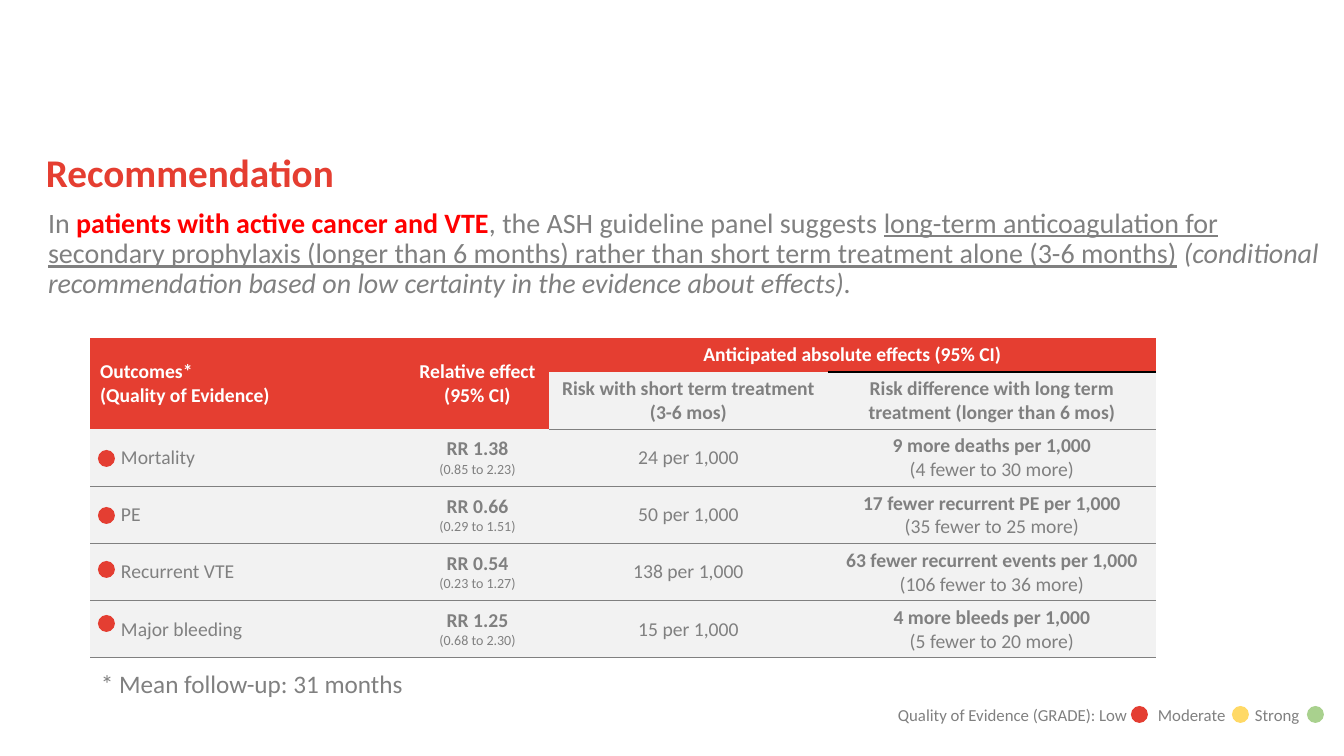
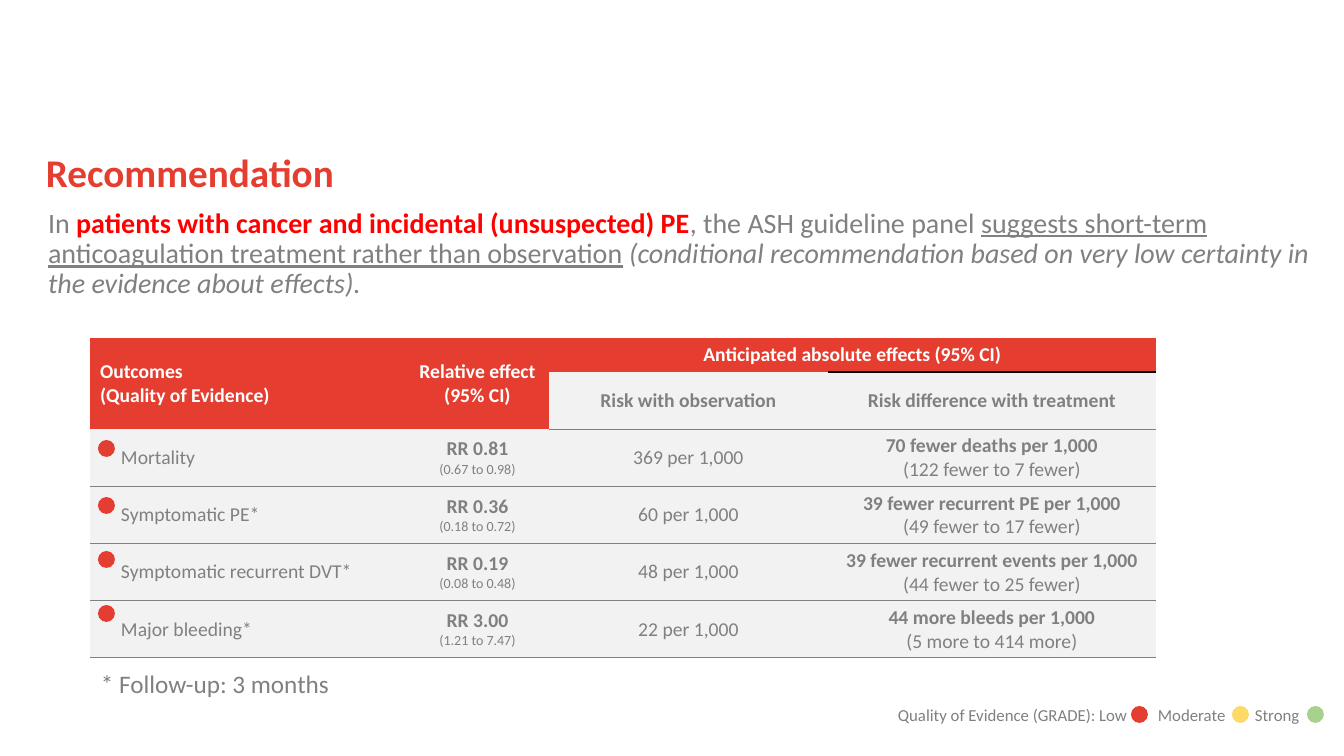
from dataclasses import dataclass
from typing import NamedTuple

from lxml import etree
from pptx import Presentation
from pptx.dml.color import RGBColor
from pptx.enum.shapes import MSO_SHAPE
from pptx.enum.text import MSO_ANCHOR, MSO_AUTO_SIZE, PP_ALIGN
from pptx.oxml.ns import qn
from pptx.util import Emu, Pt

ELLIPSE = MSO_SHAPE.OVAL
TOP, MIDDLE = MSO_ANCHOR.TOP, MSO_ANCHOR.MIDDLE
LEFT, CENTER = PP_ALIGN.LEFT, PP_ALIGN.CENTER
NO_FIT = MSO_AUTO_SIZE.NONE
PLAIN_TABLE = "{2D5ABB26-0587-4C30-8999-92F81FD0307C}"


@dataclass(frozen=True)
class Theme:
    font: str = "Calibri"
    red: str = "E53E31"
    low: str = "E43E32"
    moderate: str = "FFD966"
    strong: str = "A9D18E"
    emphasis: str = "FF0000"
    grey: str = "808080"
    pale: str = "F2F2F2"
    white: str = "FFFFFF"
    black: str = "000000"
    title: int = 28
    body: int = 20
    note: int = 18
    cell: int = 14
    legend: int = 12
    interval: int = 10


THEME = Theme()


class Box(NamedTuple):
    left: int
    top: int
    width: int
    height: int


class Span(NamedTuple):
    text: str
    size: int = THEME.cell
    color: str = THEME.grey
    bold: bool = False
    italic: bool = False
    underline: bool = False


@dataclass(frozen=True)
class Outcome:
    name: str
    ratio: str
    interval: str
    risk: str
    difference: str
    spread: str


@dataclass(frozen=True)
class Recommendation:
    patients: str
    lead: str
    advice: str
    certainty: str
    outcome_head: str
    risk_head: tuple[str, ...]
    difference_head: str
    outcomes: tuple[Outcome, ...]
    first_dot: int
    footnote: str


SLIDE_W, SLIDE_H = 1344, 756
TITLE_BOX = Box(46, 148, 1210, 79)
BODY_BOX = Box(48, 209, 1274, 170)
TABLE_BOX = Box(90, 338, 1066, 319)
COLUMNS = (316, 143, 279, 328)
ROWS = (34,) + (57,) * 5
NAME_INDENT = 31
DOT = 17
DOT_LEFT = 98
DOT_STEPS = (0, 57, 111, 165)
LEGEND_BOX = Box(888, 700, 456, 30)
LEGEND_TABS = (260, 357)
LEGEND_DOTS = ((1131, THEME.low), (1232, THEME.moderate), (1307, THEME.strong))
LEGEND_DOT_TOP = 706
NOTE_BOX = Box(91, 663, 340, 40)

RECOMMENDATIONS = (
    Recommendation(
        "patients with active cancer and VTE",
        ", the ASH guideline panel suggests ",
        "long-term anticoagulation for secondary prophylaxis (longer than 6 months) "
        "rather than short term treatment alone (3-6 months)",
        "(conditional recommendation based on low certainty in the evidence about effects).",
        "Outcomes*",
        ("Risk with short term treatment", "(3-6 mos)"),
        "Risk difference with long term treatment (longer than 6 mos)",
        (
            Outcome("Mortality", "RR 1.38", "(0.85 to 2.23)", "24 per 1,000",
                    "9 more deaths per 1,000", "(4 fewer to 30 more)"),
            Outcome("PE", "RR 0.66", "(0.29 to 1.51)", "50 per 1,000",
                    "17 fewer recurrent PE per 1,000", "(35 fewer to 25 more)"),
            Outcome("Recurrent VTE", "RR 0.54", "(0.23 to 1.27)", "138 per 1,000",
                    "63 fewer recurrent events per 1,000", "(106 fewer to 36 more)"),
            Outcome("Major bleeding", "RR 1.25", "(0.68 to 2.30)", "15 per 1,000",
                    "4 more bleeds per 1,000", "(5 fewer to 20 more)"),
        ),
        450,
        "* Mean follow-up: 31 months",
    ),
    Recommendation(
        "patients with cancer and incidental (unsuspected) PE",
        ", the ASH guideline panel ",
        "suggests short-term anticoagulation treatment rather than observation",
        "(conditional recommendation based on very low certainty in the evidence about effects).",
        "Outcomes",
        ("Risk with observation",),
        "Risk difference with treatment",
        (
            Outcome("Mortality", "RR 0.81", "(0.67 to 0.98)", "369 per 1,000",
                    "70 fewer deaths per 1,000", "(122 fewer to 7 fewer)"),
            Outcome("Symptomatic PE*", "RR 0.36", "(0.18 to 0.72)", "60 per 1,000",
                    "39 fewer recurrent PE per 1,000", "(49 fewer to 17 fewer)"),
            Outcome("Symptomatic recurrent DVT*", "RR 0.19", "(0.08 to 0.48)", "48 per 1,000",
                    "39 fewer recurrent events per 1,000", "(44 fewer to 25 fewer)"),
            Outcome("Major bleeding*", "RR 3.00", "(1.21 to 7.47)", "22 per 1,000",
                    "44 more bleeds per 1,000", "(5 more to 414 more)"),
        ),
        440,
        "* Follow-up: 3 months",
    ),
)


def px(n: int) -> Emu:
    return Emu(round(n * 914400 / 100.8))


def place(box: Box) -> tuple[Emu, ...]:
    return tuple(px(n) for n in box)


def add_span(p, span: Span) -> None:
    r = p.add_run()
    r.text = span.text
    font = r.font
    font.name = THEME.font
    font.size = Pt(span.size)
    font.color.rgb = RGBColor.from_string(span.color)
    font.bold, font.italic, font.underline = span.bold, span.italic, span.underline


def fill_placeholder(sp, box: Box, spans: list[Span]):
    sp.left, sp.top, sp.width, sp.height = place(box)
    tf = sp.text_frame
    tf.auto_size = NO_FIT
    tf.word_wrap = True
    tf.vertical_anchor = TOP
    tf.margin_left = tf.margin_top = tf.margin_right = tf.margin_bottom = 0
    p = tf.paragraphs[0]
    pPr = p._p.get_or_add_pPr()
    pPr.set("marL", "0")
    pPr.set("indent", "0")
    etree.SubElement(pPr, qn("a:buNone"))
    p.alignment = LEFT
    p.space_before = Pt(0)
    for span in spans:
        add_span(p, span)
    return p


def add_label(shapes, box: Box, span: Span, tabs: tuple[int, ...] = ()) -> None:
    tf = shapes.add_textbox(*place(box)).text_frame
    tf.word_wrap = True
    p = tf.paragraphs[0]
    if tabs:
        stops = etree.SubElement(p._p.get_or_add_pPr(), qn("a:tabLst"))
        for tab in tabs:
            etree.SubElement(stops, qn("a:tab"), pos=str(px(tab)), algn="l")
    add_span(p, span)


def add_dot(shapes, left: int, top: int, color: str) -> None:
    sp = shapes.add_shape(ELLIPSE, *place(Box(left, top, DOT, DOT)))
    sp.shadow.inherit = False
    sp.fill.solid()
    sp.fill.fore_color.rgb = RGBColor.from_string(color)
    sp.line.fill.background()


def add_border(cell, side: str, color: str) -> None:
    ln = etree.Element(qn(f"a:{side}"), w=str(Pt(1)))
    fill = etree.SubElement(ln, qn("a:solidFill"))
    etree.SubElement(fill, qn("a:srgbClr"), val=color)
    cell._tc.get_or_add_tcPr().insert(0, ln)


def write_cell(cell, lines: list[Span], align=CENTER) -> None:
    tf = cell.text_frame
    for i, span in enumerate(lines):
        p = tf.add_paragraph() if i else tf.paragraphs[0]
        p.alignment = align
        add_span(p, span)


def add_evidence_table(s, rec: Recommendation) -> None:
    sp = s.shapes.add_table(len(ROWS), len(COLUMNS), *place(TABLE_BOX))
    table = sp.table
    table._tbl.tblPr.find(qn("a:tableStyleId")).text = PLAIN_TABLE
    table.first_row = table.horz_banding = False
    for column, width in zip(table.columns, COLUMNS):
        column.width = px(width)
    for row, height in zip(table.rows, ROWS):
        row.height = px(height)

    for y in range(len(ROWS)):
        for x in range(len(COLUMNS)):
            cell = table.cell(y, x)
            is_head = y == 0 or (y == 1 and x < 2)
            cell.vertical_anchor = MIDDLE
            cell.fill.solid()
            cell.fill.fore_color.rgb = RGBColor.from_string(THEME.red if is_head else THEME.pale)
            if not is_head:
                add_border(cell, "lnB", THEME.grey)
    add_border(table.cell(1, 3), "lnT", THEME.black)
    for first, last in (((0, 0), (1, 0)), ((0, 1), (1, 1)), ((0, 2), (0, 3))):
        table.cell(*first).merge(table.cell(*last))

    def head(*lines: str, color: str = THEME.white) -> list[Span]:
        return [Span(line, color=color, bold=True) for line in lines]

    write_cell(table.cell(0, 0), head(rec.outcome_head, "(Quality of Evidence)"), LEFT)
    write_cell(table.cell(0, 1), head("Relative effect", "(95% CI)"))
    write_cell(table.cell(0, 2), head("Anticipated absolute effects (95% CI)"))
    write_cell(table.cell(1, 2), head(*rec.risk_head, color=THEME.grey))
    write_cell(table.cell(1, 3), head(rec.difference_head, color=THEME.grey))

    for y, item in enumerate(rec.outcomes, start=2):
        table.cell(y, 0).margin_left = px(NAME_INDENT)
        write_cell(table.cell(y, 0), [Span(item.name)], LEFT)
        write_cell(table.cell(y, 1), [Span(item.ratio, bold=True),
                                      Span(item.interval, THEME.interval)])
        write_cell(table.cell(y, 2), [Span(item.risk)])
        write_cell(table.cell(y, 3), [Span(item.difference, bold=True), Span(item.spread)])


def add_legend(s) -> None:
    shapes = s.shapes.add_group_shape().shapes
    text = "Quality of Evidence (GRADE): Low\tModerate\tStrong"
    add_label(shapes, LEGEND_BOX, Span(text, THEME.legend), LEGEND_TABS)
    for left, color in LEGEND_DOTS:
        add_dot(shapes, left, LEGEND_DOT_TOP, color)


def add_recommendation(prs, rec: Recommendation) -> None:
    s = prs.slides.add_slide(prs.slide_layouts[1])
    fill_placeholder(s.shapes.title, TITLE_BOX,
                     [Span("Recommendation", THEME.title, THEME.red, bold=True)])
    p = fill_placeholder(s.placeholders[1], BODY_BOX, [
        Span("In ", THEME.body),
        Span(rec.patients, THEME.body, THEME.emphasis, bold=True),
        Span(rec.lead, THEME.body),
        Span(rec.advice, THEME.body, underline=True),
        Span(" ", THEME.body),
        Span(rec.certainty, THEME.body, italic=True),
    ])
    p.line_spacing = 0.9
    add_legend(s)
    add_evidence_table(s, rec)
    for step in DOT_STEPS:
        add_dot(s.shapes, DOT_LEFT, rec.first_dot + step, THEME.low)
    add_label(s.shapes, NOTE_BOX, Span(rec.footnote, THEME.note))


def main() -> None:
    prs = Presentation()
    prs.slide_width, prs.slide_height = px(SLIDE_W), px(SLIDE_H)
    for rec in RECOMMENDATIONS:
        add_recommendation(prs, rec)
    prs.save("out.pptx")


if __name__ == "__main__":
    main()
